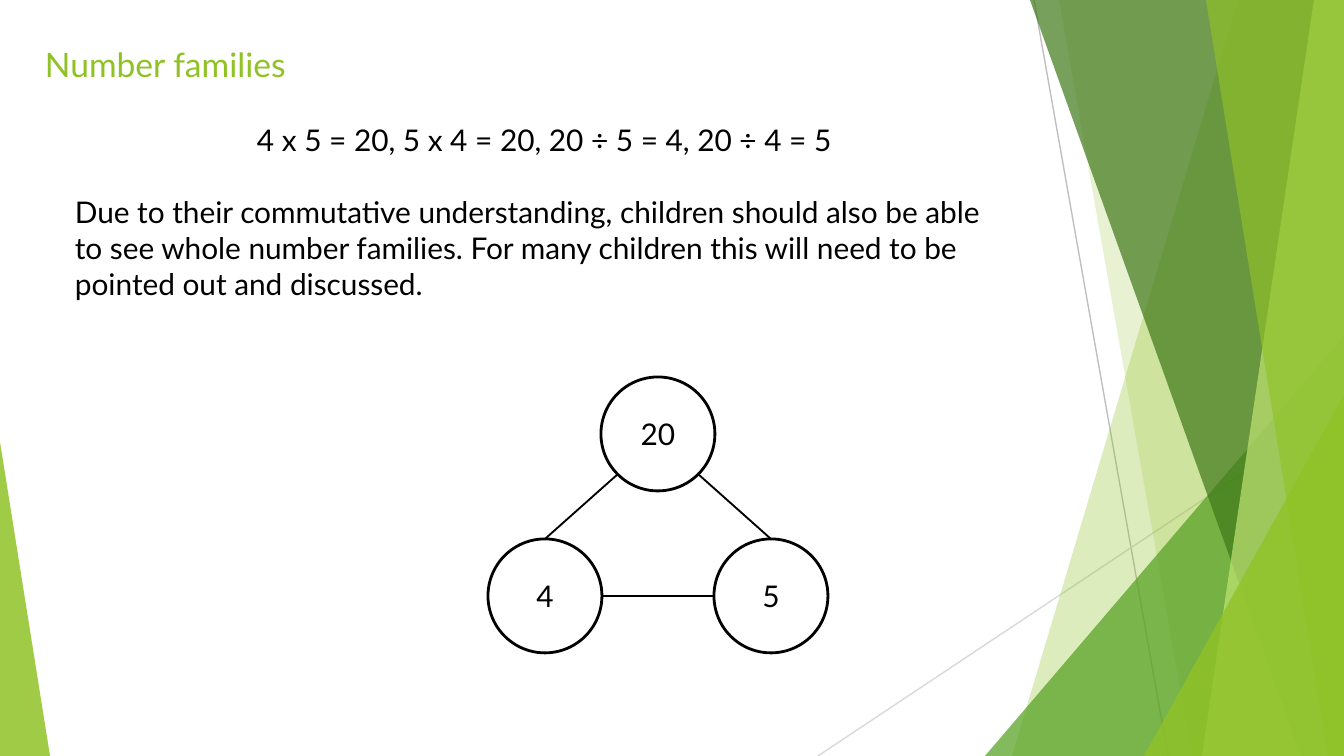
from typing import NamedTuple

from lxml import etree
from pptx import Presentation
from pptx.dml.color import RGBColor
from pptx.enum.shapes import MSO_CONNECTOR, MSO_SHAPE
from pptx.enum.text import MSO_ANCHOR, PP_ALIGN
from pptx.oxml.ns import qn
from pptx.util import Emu, Pt

LINE = MSO_CONNECTOR.STRAIGHT
ROUND, WEDGE = MSO_SHAPE.OVAL, MSO_SHAPE.ISOSCELES_TRIANGLE
TOP, MIDDLE = MSO_ANCHOR.TOP, MSO_ANCHOR.MIDDLE
LEFT, CENTER = PP_ALIGN.LEFT, PP_ALIGN.CENTER

SCALE = 914400 / 134.4  # EMU in one px
WIDE, HIGH = 1344, 756
FONT = "Lato"
INK = {
    "lime": "90C226", "leaf": "54A021", "moss": "3F7819", "pale": "C0E474",
    "gray": "BFBFBF", "light": "D9D9D9", "black": "000000",
}


class Band(NamedTuple):
    """Fills the space from a slanted left edge to the right of the slide."""
    top: int
    foot: int
    ink: str
    alpha: int


class Peak(NamedTuple):
    """A right triangle standing on the foot of the slide."""
    left: int
    top: int
    width: int
    apex: int
    ink: str
    alpha: int


class Node(NamedTuple):
    x: int
    y: int
    label: str


def px(num: float) -> Emu:
    return Emu(round(num * SCALE))


def rgb(ink: str) -> RGBColor:
    return RGBColor.from_string(INK[ink])


def tint(shape, ink: str, alpha: int) -> None:
    shape.shadow.inherit = False
    shape.line.fill.background()
    shape.fill.solid()
    shape.fill.fore_color.rgb = rgb(ink)
    color = shape.fill._xPr.find(qn("a:solidFill"))[0]
    etree.SubElement(color, qn("a:alpha")).set("val", str(alpha * 1000))


def rule(slide, x1: int, y1: int, x2: int, y2: int, ink: str, weight: float):
    line = slide.shapes.add_connector(LINE, px(x1), px(y1), px(x2), px(y2))
    line.line.color.rgb = rgb(ink)
    line.line.width = Pt(weight)
    etree.SubElement(line._element.spPr, qn("a:effectLst"))
    return line


def band(slide, item: Band) -> None:
    pen = slide.shapes.build_freeform(item.top, 0, scale=SCALE)
    pen.add_line_segments([(WIDE, 0), (WIDE, HIGH), (item.foot, HIGH)])
    tint(pen.convert_to_shape(), item.ink, item.alpha)


def peak(slide, item: Peak) -> None:
    shape = slide.shapes.add_shape(
        WEDGE, px(item.left), px(item.top), px(item.width), px(HIGH - item.top))
    shape.adjustments[0] = item.apex
    tint(shape, item.ink, item.alpha)


def write(shape, *lines: str, size: int = 16, ink: str = "black",
          aligns: tuple = (LEFT,), anchor=TOP, inset: int = 13,
          indent: int = 0, gap: float = 0) -> None:
    frame = shape.text_frame
    frame.word_wrap = True
    frame.vertical_anchor = anchor
    frame.margin_left = frame.margin_right = px(inset)
    frame.margin_top = frame.margin_bottom = px(inset)
    for i, (text, align) in enumerate(zip(lines, aligns)):
        para = frame.add_paragraph() if i else frame.paragraphs[0]
        para.alignment = align
        if i:
            para.space_before = Pt(gap)
        if indent:
            para._p.get_or_add_pPr().set("marL", str(px(indent)))
        run = para.add_run()
        run.text = text
        run.font.name, run.font.size = FONT, Pt(size)
        run.font.color.rgb = rgb(ink)


def circle(slide, node: Node, rad: int):
    shape = slide.shapes.add_shape(
        ROUND, px(node.x - rad), px(node.y - rad), px(2 * rad), px(2 * rad))
    shape.shadow.inherit = False
    shape.fill.background()
    shape.line.color.rgb = rgb("black")
    shape.line.width = Pt(1.5)
    write(shape, node.label, aligns=(CENTER,), anchor=MIDDLE)
    return shape


def box(slide, left: int, top: int, width: int, height: int):
    return slide.shapes.add_textbox(px(left), px(top), px(width), px(height))


def main() -> None:
    deck = Presentation()
    deck.slide_width, deck.slide_height = px(WIDE), px(HIGH)
    slide = deck.slides.add_slide(deck.slide_layouts[6])

    # Backdrop, from back to front
    rule(slide, 1034, 0, 1168, HIGH, "gray", 0.75)
    rule(slide, WIDE, 406, 818, HIGH, "light", 0.75)
    facets = [
        Band(1238, 1012, "lime", 30),
        Band(1059, 1192, "lime", 20),
        Peak(985, 336, 359, 1, "leaf", 72),
        Band(1030, 1301, "moss", 70),
        Band(1314, 1202, "pale", 70),
        Band(1206, 1328, "lime", 65),
        Peak(1144, 395, 200, 1, "lime", 80),
        Peak(0, 442, 50, 0, "lime", 85),
    ]
    for item in facets:
        if isinstance(item, Band):
            band(slide, item)
        else:
            peak(slide, item)

    # Title and body
    write(box(slide, 32, 31, 1253, 65), "Number families", size=18, ink="lime")
    write(
        box(slide, 46, 109, 981, 188),
        "4 x 5 = 20, 5 x 4 = 20, 20 ÷ 5 = 4, 20 ÷ 4 = 5",
        "Due to their commutative understanding, children should also be able "
        "to see whole number families. For many children this will need to be "
        "pointed out and discussed.",
        aligns=(CENTER, LEFT), indent=16, gap=19.2)

    # Number family: the product above its two factors
    rad, step = 57, 113
    head = Node(658, 434, "20")
    base = head.y + 162
    pair = [Node(head.x - step, base, "4"), Node(head.x + step, base, "5")]
    circle(slide, head, rad)
    slant = round(rad * 0.71)
    for node, side in zip(pair, (-1, 1)):
        disc = circle(slide, node, rad)
        link = rule(slide, head.x + side * slant, head.y + slant,
                    node.x, node.y - rad, "black", 1)
        link.end_connect(disc, 0)
    rule(slide, pair[0].x + rad, base, pair[1].x - rad, base, "black", 1)

    deck.save("out.pptx")


if __name__ == "__main__":
    main()
